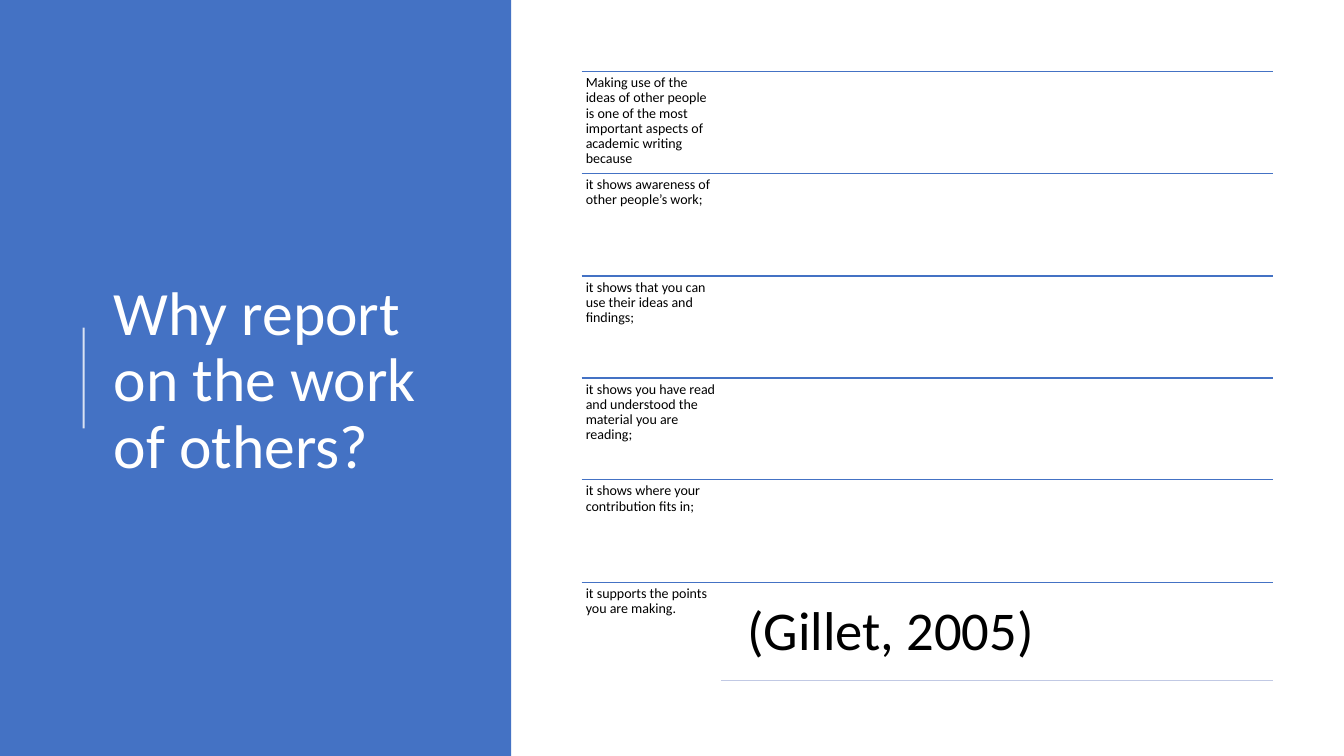
from collections import namedtuple
from dataclasses import dataclass

from lxml import etree
from pptx import Presentation
from pptx.dml.color import RGBColor
from pptx.enum.shapes import MSO_CONNECTOR, MSO_SHAPE
from pptx.enum.text import MSO_ANCHOR, MSO_AUTO_SIZE, PP_ALIGN
from pptx.oxml.ns import qn
from pptx.util import Pt

RECT = MSO_SHAPE.RECTANGLE
LINE = MSO_CONNECTOR.STRAIGHT
LEFT = PP_ALIGN.LEFT
TOP = MSO_ANCHOR.TOP
MIDDLE = MSO_ANCHOR.MIDDLE
FIXED = MSO_AUTO_SIZE.NONE
TITLE_ONLY = 5
SCALE = 9144

Box = namedtuple("Box", "x y w h")


@dataclass(frozen=True)
class Theme:
    font: str = "Calibri"
    blue: str = "4472C4"
    pale: str = "C1C9E4"
    white: str = "FFFFFF"
    black: str = "000000"
    title: int = 44
    body: int = 10
    cite: int = 39
    rule: float = 1
    bar: float = 1.5


THEME = Theme()
REASONS = [
    "Making use of the ideas of other people is one of the most important aspects of academic writing because",
    "it shows awareness of other people’s work;",
    "it shows that you can use their ideas and findings;",
    "it shows you have read and understood the material you are reading;",
    "it shows where your contribution fits in;",
    "it supports the points you are making.",
]


def px(n):
    return n * SCALE


def place(shape, box):
    shape.left, shape.top, shape.width, shape.height = map(px, box)


def write(shape, text, size, color, inset, anchor=TOP):
    frame = shape.text_frame
    frame.word_wrap = True
    frame.auto_size = FIXED
    frame.vertical_anchor = anchor
    frame.margin_left = frame.margin_right = px(inset)
    frame.margin_top = frame.margin_bottom = px(min(inset, 16) if anchor == TOP else 5)
    para = frame.paragraphs[0]
    para.alignment = LEFT
    para.line_spacing = 0.9
    run = para.add_run()
    run.text = text
    run.font.name = THEME.font
    run.font.size = Pt(size)
    run.font.color.rgb = RGBColor.from_string(color)


def label(slide, box, text, size, inset):
    shape = slide.shapes.add_textbox(*map(px, box))
    write(shape, text, size, THEME.black, inset)


def rule(slide, start, end, color, width):
    line = slide.shapes.add_connector(LINE, *map(px, start + end))
    line.line.color.rgb = RGBColor.from_string(color)
    line.line.width = Pt(width)
    etree.SubElement(line._element.spPr, qn("a:effectLst"))
    return line


def panel(slide, box, text):
    back = slide.shapes.add_shape(RECT, *map(px, box))
    back.shadow.inherit = False
    back.fill.solid()
    back.fill.fore_color.rgb = RGBColor.from_string(THEME.blue)
    back.line.fill.background()
    x = box.x + 83
    mid = box.y + box.h // 2
    bar = rule(slide, (x, mid + 50), (x, mid - 50), THEME.white, THEME.bar)
    tint = bar._element.spPr.find(".//" + qn("a:srgbClr"))
    etree.SubElement(tint, qn("a:alpha"), val="80000")
    title = slide.shapes.title
    place(title, Box(x + 20, box.y + 78, 369, 602))
    write(title, text, THEME.title, THEME.white, 10, MIDDLE)


def reasons(slide, box, items, cite):
    step = box.h / len(items)
    col = box.w // 5
    right = box.x + box.w
    for i, text in enumerate(items):
        y = box.y + round(i * step)
        rule(slide, (box.x, y), (right, y), THEME.blue, THEME.rule)
        label(slide, Box(box.x, y, col, round(step)), text, THEME.body, 4)
    left = box.x + col + 11
    label(slide, Box(left, y + 5, right - left, 92), cite, THEME.cite, 16)
    base = y + 97
    rule(slide, (box.x + col + 1, base), (right, base), THEME.pale, THEME.rule)


def main():
    deck = Presentation()
    deck.slide_width = px(1333)
    deck.slide_height = px(750)
    slide = deck.slides.add_slide(deck.slide_layouts[TITLE_ONLY])
    panel(slide, Box(0, 0, 507, 750), "Why report on the work of others?")
    reasons(slide, Box(577, 71, 686, 608), REASONS, "(Gillet, 2005)")
    tree = slide.shapes._spTree
    title = slide.shapes.title._element
    tree.remove(title)
    tree.insert(4, title)
    deck.save("out.pptx")


if __name__ == "__main__":
    main()
